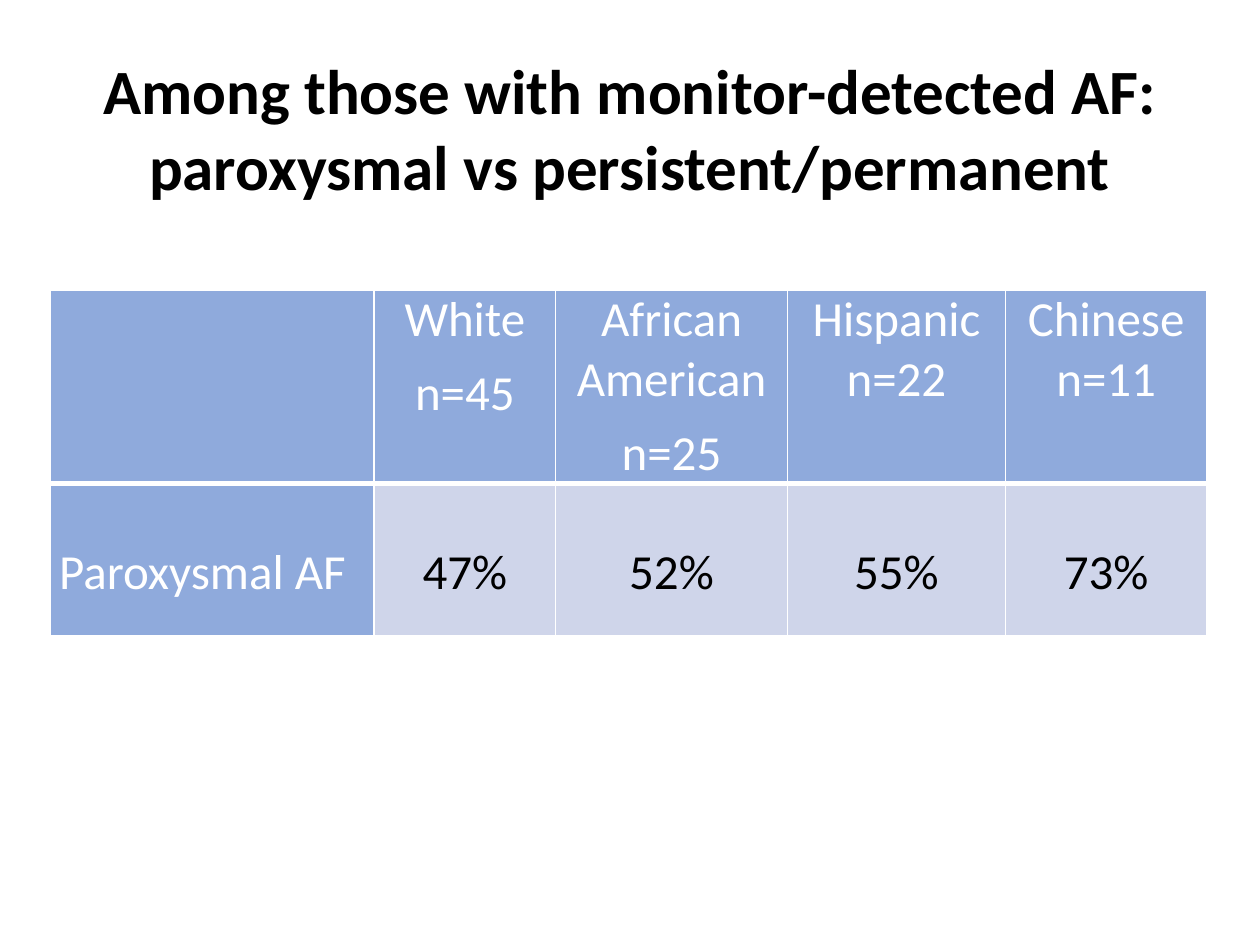
import pptx
import pptx.util
import pptx.dml.color
import pptx.enum.text
import pptx.oxml
import pptx.oxml.ns

Inches = pptx.util.Inches
Pt = pptx.util.Pt
ALIGN = pptx.enum.text.PP_ALIGN
ANCHOR = pptx.enum.text.MSO_ANCHOR

COLOURS = {"black": "000000", "white": "FFFFFF", "header": "8FAADC", "body": "CFD5EA"}
FONT = "Calibri"
TITLE = ["Among those with monitor-detected AF:", "paroxysmal vs persistent/permanent"]
COLUMN_WIDTHS = [2.57, 1.44, 1.84, 1.73, 1.6]
ROW_HEIGHTS = [1.52, 1.21]
# Each cell is a list of its paragraphs
ROWS = [
    [[], ["White", "n=45"], ["African American", "n=25"], ["Hispanic n=22"], ["Chinese n=11"]],
    [["Paroxysmal AF"], ["47%"], ["52%"], ["55%"], ["73%"]],
]
HEADER_SPACING = {"space_before": Pt(4), "space_after": Pt(4)}
BODY_SPACING = {"space_before": Pt(5), "space_after": Pt(5), "line_spacing": 2.0}
CELL_MARGINS = {"margin_left": Inches(0.07), "margin_right": Inches(0.07),
                "margin_top": 0, "margin_bottom": 0}


def rgb(name):
    return pptx.dml.color.RGBColor.from_string(COLOURS[name])


def set_all(target, values):
    for name, value in values.items():
        setattr(target, name, value)


def write_paragraphs(frame, lines, size, colour, bold, layout):
    for index, line in enumerate(lines):
        para = frame.paragraphs[0] if index == 0 else frame.add_paragraph()
        set_all(para, layout)
        span = para.add_run()
        span.text = line
        set_all(span.font, {"name": FONT, "size": Pt(size), "bold": bold})
        span.font.color.rgb = rgb(colour)


def set_borders(cell, widths):
    """Draw white borders, given as points per side in schema order."""
    properties = cell._tc.get_or_add_tcPr()
    for index, (side, width) in enumerate(widths.items()):
        properties.insert(index, pptx.oxml.parse_xml(
            f'<a:ln{side} {pptx.oxml.ns.nsdecls("a")} w="{Pt(width)}">'
            f'<a:solidFill><a:srgbClr val="{COLOURS["white"]}"/></a:solidFill></a:ln{side}>'))


def add_title(page):
    title = page.shapes.title
    set_all(title, {"left": Inches(0.17), "top": Inches(0.35),
                    "width": Inches(9.66), "height": Inches(1.32)})
    set_all(title.text_frame, {"vertical_anchor": ANCHOR.MIDDLE, "word_wrap": True})
    write_paragraphs(title.text_frame, TITLE, 36, "black", True, {"alignment": ALIGN.CENTER})


def format_cell(cell, lines, row, column):
    is_header = row == 0 or column == 0
    set_all(cell, CELL_MARGINS)
    cell.fill.solid()
    cell.fill.fore_color.rgb = rgb("header" if is_header else "body")
    # The edge below the header row is heavier
    set_borders(cell, {"L": 1, "R": 1, "T": 3 if row else 1, "B": 1 if row else 3})
    layout = dict(BODY_SPACING if row else HEADER_SPACING)
    layout["alignment"] = ALIGN.CENTER if column else ALIGN.LEFT
    write_paragraphs(cell.text_frame, lines, 28, "white" if is_header else "black", False, layout)
    if row and column == 0:
        indent = cell.text_frame.paragraphs[0]._p.get_or_add_pPr()
        indent.set("marL", str(Inches(0.24)))
        indent.set("indent", str(Inches(-0.24)))


def add_result_table(page):
    table = page.shapes.add_table(
        len(ROWS), len(COLUMN_WIDTHS), Inches(0.4), Inches(2.3),
        Inches(sum(COLUMN_WIDTHS)), Inches(sum(ROW_HEIGHTS))).table
    for column, width in zip(table.columns, COLUMN_WIDTHS):
        column.width = Inches(width)
    for row, height in zip(table.rows, ROW_HEIGHTS):
        row.height = Inches(height)
    set_all(table, {"first_row": False, "horz_banding": False})
    for row, cells in enumerate(ROWS):
        for column, lines in enumerate(cells):
            format_cell(table.cell(row, column), lines, row, column)


def main():
    deck = pptx.Presentation()
    set_all(deck, {"slide_width": Inches(10), "slide_height": Inches(7.5)})
    page = deck.slides.add_slide(deck.slide_layouts[5])
    add_title(page)
    add_result_table(page)
    deck.save("out.pptx")


if __name__ == "__main__":
    main()
